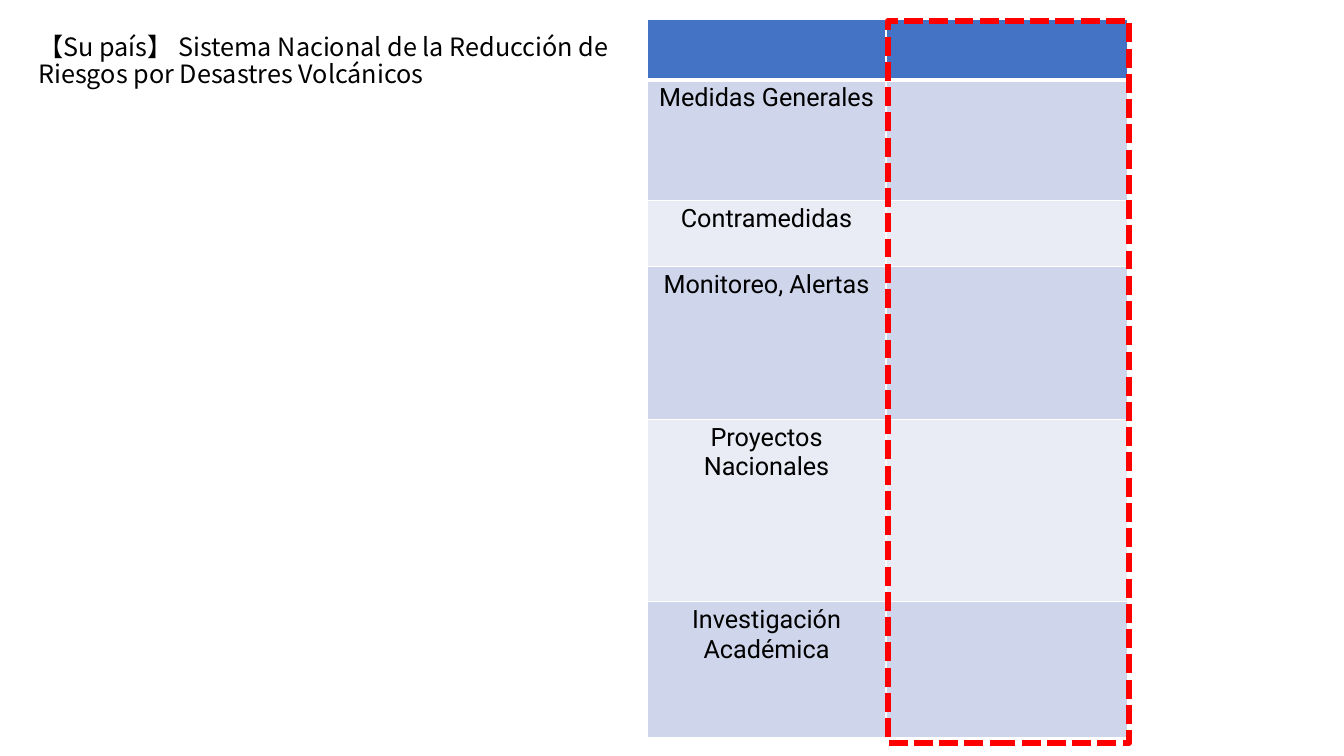
from lxml import etree
from pptx import Presentation
from pptx.dml.color import RGBColor
from pptx.enum.dml import MSO_LINE
from pptx.enum.shapes import MSO_SHAPE
from pptx.enum.text import MSO_ANCHOR, MSO_AUTO_SIZE, PP_ALIGN
from pptx.oxml.ns import qn
from pptx.util import Pt

TOP = MSO_ANCHOR.TOP
LEFT, CENTER = PP_ALIGN.LEFT, PP_ALIGN.CENTER
RECTANGLE = MSO_SHAPE.RECTANGLE
DASH = MSO_LINE.SQUARE_DOT
NO_AUTOFIT = MSO_AUTO_SIZE.NONE
TITLE_ONLY = 5

TITLE = "【Su país】 Sistema Nacional de la Reducción de Riesgos por Desastres Volcánicos"
MEASURES = [
    ("", 43.2),
    ("Medidas Generales", 86.4),
    ("Contramedidas", 46.8),
    ("Monitoreo, Alertas", 109.44),
    ("Proyectos Nacionales", 130.32),
    ("Investigación Académica", 97.2),
]
COLUMN_WIDTHS = (170.64, 172.8)


def color(value):
    return RGBColor.from_string(value)


def write(frame, text, *, font, size=18, ink="000000", align=LEFT, spacing=1.0):
    para = frame.paragraphs[0]
    para.alignment = align
    para.line_spacing = spacing
    span = para.add_run()
    span.text = text
    span.font.name = font
    span.font.size = Pt(size)
    span.font.color.rgb = color(ink)
    east_asian = etree.SubElement(span._r.get_or_add_rPr(), qn("a:ea"))
    east_asian.set("typeface", font)


def set_borders(cell, bottom_width):
    """Put white lines round a cell, ahead of its fill in the XML."""
    properties = cell._tc.get_or_add_tcPr()
    sides = (("a:lnL", 1), ("a:lnR", 1), ("a:lnT", 1), ("a:lnB", bottom_width))
    for index, (side, width) in enumerate(sides):
        line = etree.Element(qn(side), w=str(Pt(width)))
        fill = etree.SubElement(line, qn("a:solidFill"))
        etree.SubElement(fill, qn("a:srgbClr"), val="FFFFFF")
        properties.insert(index, line)


class Page:
    title_font = "Noto Sans CJK JP"
    table_font = "Roboto"
    header_fill = "4472C4"
    band_fills = ("E9EBF5", "CFD5EA")
    accent = "FF0000"

    def __init__(self, deck):
        self.slide = deck.slides.add_slide(deck.slide_layouts[TITLE_ONLY])

    def title(self, text, left, top, width, height):
        box = self.slide.shapes.title
        box.left, box.top, box.width, box.height = map(Pt, (left, top, width, height))
        frame = box.text_frame
        frame.word_wrap = True
        frame.auto_size = NO_AUTOFIT
        frame.vertical_anchor = TOP
        frame.margin_top = 0
        write(frame, text, font=self.title_font, spacing=0.9)

    def table(self, rows, widths, left, top):
        height = sum(row_height for _, row_height in rows)
        table = self.slide.shapes.add_table(
            len(rows), len(widths), Pt(left), Pt(top), Pt(sum(widths)), Pt(height)
        ).table
        for column, width in zip(table.columns, widths):
            column.width = Pt(width)
        for index, (label, row_height) in enumerate(rows):
            row = table.rows[index]
            row.height = Pt(row_height)
            for cell in row.cells:
                cell.fill.solid()
                fill = self.band_fills[index % 2] if index else self.header_fill
                cell.fill.fore_color.rgb = color(fill)
                cell.margin_left = cell.margin_right = Pt(5.4)
                cell.margin_top = cell.margin_bottom = Pt(2.7)
                set_borders(cell, 1 if index else 3)
            if label:
                write(row.cells[0].text_frame, label, font=self.table_font, align=CENTER)

    def dashed_frame(self, left, top, width, height):
        box = self.slide.shapes.add_shape(
            RECTANGLE, Pt(left), Pt(top), Pt(width), Pt(height)
        )
        box.shadow.inherit = False
        box.fill.background()
        box.line.color.rgb = color(self.accent)
        box.line.width = Pt(4.5)
        box.line.dash_style = DASH


def main():
    deck = Presentation()
    deck.slide_width, deck.slide_height = Pt(960), Pt(540)
    page = Page(deck)
    page.title(TITLE, 20.16, 24.5, 426.96, 133.2)
    page.table(MEASURES, COLUMN_WIDTHS, 462.24, 13.68)
    page.dashed_frame(634.32, 15.12, 172.08, 515.52)
    deck.save("out.pptx")


if __name__ == "__main__":
    main()
